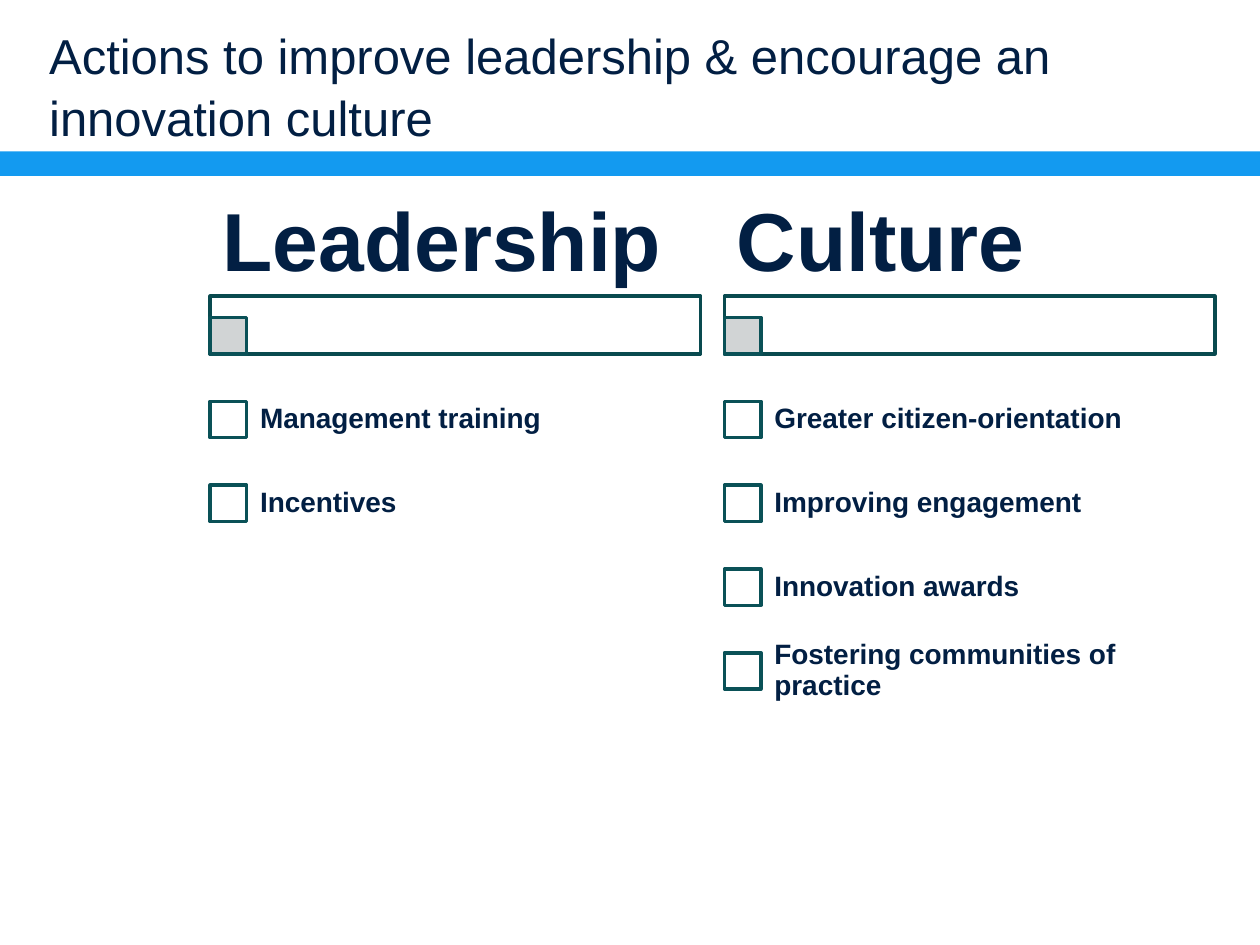
from lxml.etree import SubElement
from pptx import Presentation
from pptx.dml.color import RGBColor
from pptx.enum.shapes import MSO_SHAPE
from pptx.enum.text import MSO_ANCHOR, MSO_AUTO_SIZE, PP_ALIGN
from pptx.oxml.ns import qn
from pptx.util import Pt

NAVY = RGBColor(0x02, 0x1F, 0x43)
BLUE = RGBColor(0x13, 0x9A, 0xF0)
WHITE = RGBColor(0xFF, 0xFF, 0xFF)
GREY = RGBColor(0xCC, 0xD0, 0xD1)
HEADER_TEAL = RGBColor(0x09, 0x4A, 0x4F)
BOX_TEAL = RGBColor(0x0A, 0x51, 0x57)

COLUMNS = [
    ("Leadership", ["Management training", "Incentives"]),
    ("Culture", ["Greater citizen-orientation", "Improving engagement",
                 "Innovation awards", "Fostering communities of practice"]),
]
FIRST_LEFT, COLUMN_PITCH, COLUMN_WIDTH = 120.1, 293.9, 280.2
HEADING_TOP, HEADING_HEIGHT = 110.2, 59
HEADER_TOP, HEADER_HEIGHT = 169.2, 33
ROW_TOP, ROW_PITCH = 215.8, 47.9
BOX_SIZE, LABEL_INDENT = 20.8, 19.6


def set_attributes(target, values):
    """Set every named value on the target."""
    for name, value in values.items():
        setattr(target, name, value)


def format_text(shape, text, size, anchor, margins, spacing, bold):
    """Write one left-aligned paragraph with the given layout."""
    horizontal, vertical = margins
    frame = shape.text_frame
    frame.text = text
    set_attributes(frame, {
        "word_wrap": True, "auto_size": MSO_AUTO_SIZE.NONE,
        "vertical_anchor": anchor,
        "margin_left": Pt(horizontal), "margin_right": Pt(horizontal),
        "margin_top": Pt(vertical), "margin_bottom": Pt(vertical),
    })
    paragraph = frame.paragraphs[0]
    set_attributes(paragraph, {"alignment": PP_ALIGN.LEFT, "line_spacing": spacing})
    set_attributes(paragraph.font, {"name": "Arial", "size": Pt(size), "bold": bold})
    paragraph.font.color.rgb = NAVY


def add_title(slide, text):
    """Place and format the title placeholder."""
    title = slide.shapes.title
    set_attributes(title, {"left": Pt(28.1), "top": Pt(5), "width": Pt(666), "height": Pt(78.5)})
    format_text(title, text, 28, MSO_ANCHOR.BOTTOM, (0, 0), 1.05, False)


def add_rectangle(slide, left, top, width, height, fill, line=None, opacity=100):
    """Add a flat rectangle with an optional outline."""
    shape = slide.shapes.add_shape(
        MSO_SHAPE.RECTANGLE, Pt(left), Pt(top), Pt(width), Pt(height))
    shape.shadow.inherit = False
    shape.fill.solid()
    shape.fill.fore_color.rgb = fill
    if line is None:
        shape.line.fill.background()
    else:
        shape.line.color.rgb = line
        shape.line.width = Pt(2)
    if opacity < 100:
        color = shape.fill._xPr.find(qn("a:solidFill"))[0]
        SubElement(color, qn("a:alpha")).set("val", str(opacity * 1000))


def add_label(slide, left, top, width, height, text, size, margins):
    """Add a bold, vertically centred text box."""
    box = slide.shapes.add_textbox(Pt(left), Pt(top), Pt(width), Pt(height))
    format_text(box, text, size, MSO_ANCHOR.MIDDLE, margins, 0.9, True)


def add_column(slide, left, heading, actions):
    """Add a heading, its header bar and a checklist of actions."""
    add_rectangle(slide, left, HEADER_TOP, COLUMN_WIDTH, HEADER_HEIGHT, WHITE, HEADER_TEAL)
    add_rectangle(slide, left, HEADER_TOP + HEADER_HEIGHT - BOX_SIZE,
                  BOX_SIZE, BOX_SIZE, GREY, BOX_TEAL, 90)
    add_label(slide, left, HEADING_TOP, COLUMN_WIDTH, HEADING_HEIGHT, heading, 47, (7.2, 5))
    for row, action in enumerate(actions):
        top = ROW_TOP + row * ROW_PITCH
        add_rectangle(slide, left, top + (ROW_PITCH - BOX_SIZE) / 2,
                      BOX_SIZE, BOX_SIZE, WHITE, BOX_TEAL)
        add_label(slide, left + LABEL_INDENT, top, COLUMN_WIDTH - LABEL_INDENT,
                  ROW_PITCH, action, 16, (8.9, 8.9))


def main():
    """Build and save the slide."""
    presentation = Presentation()
    set_attributes(presentation, {"slide_width": Pt(720), "slide_height": Pt(540)})
    slide = presentation.slides.add_slide(presentation.slide_layouts[5])
    add_title(slide, "Actions to improve leadership & encourage an innovation culture")
    add_rectangle(slide, 0, 86.6, 720, 13.9, BLUE)
    for index, (heading, actions) in enumerate(COLUMNS):
        add_column(slide, FIRST_LEFT + index * COLUMN_PITCH, heading, actions)
    presentation.save("out.pptx")


if __name__ == "__main__":
    main()
